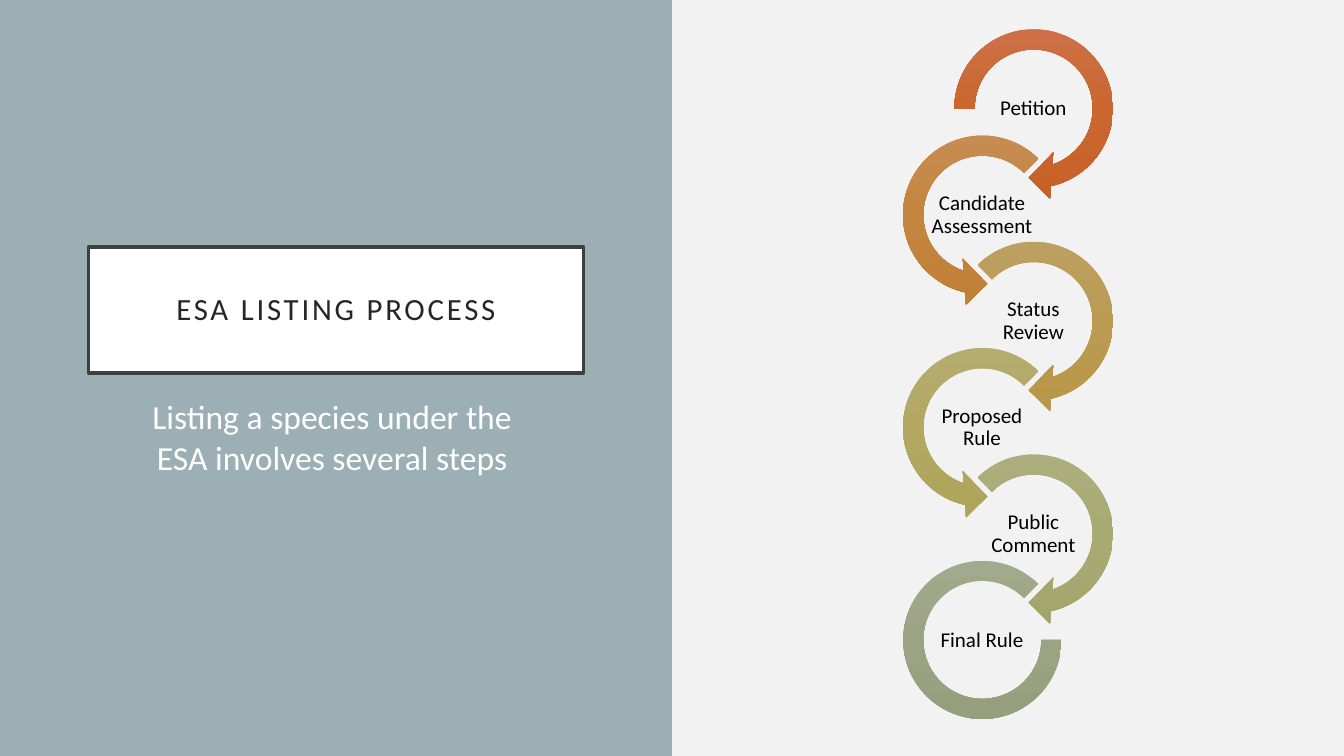
from copy import deepcopy

from pptx import Presentation
from pptx.dml.color import RGBColor
from pptx.enum.shapes import MSO_SHAPE
from pptx.enum.text import MSO_ANCHOR, PP_ALIGN
from pptx.oxml.ns import qn
from pptx.util import Pt

FONT = "Calibri"
BACKGROUND = RGBColor(0xF2, 0xF2, 0xF2)
PANEL = RGBColor(0x9B, 0xAF, 0xB5)
WHITE = RGBColor(0xFF, 0xFF, 0xFF)
BLACK = RGBColor(0x00, 0x00, 0x00)
TITLE_TEXT = RGBColor(0x26, 0x26, 0x26)
TITLE_BORDER = RGBColor(0x40, 0x40, 0x40)

STEPS = [
    ("Petition", [RGBColor(0xCC, 0x73, 0x4B), RGBColor(0xCB, 0x66, 0x2F), RGBColor(0xC8, 0x61, 0x28)]),
    ("Candidate Assessment", [RGBColor(0xC6, 0x8E, 0x55), RGBColor(0xC4, 0x85, 0x3F), RGBColor(0xC1, 0x80, 0x38)]),
    ("Status Review", [RGBColor(0xBD, 0xA1, 0x63), RGBColor(0xBB, 0x9B, 0x51), RGBColor(0xB8, 0x97, 0x49)]),
    ("Proposed Rule", [RGBColor(0xB6, 0xAD, 0x71), RGBColor(0xB2, 0xA8, 0x62), RGBColor(0xAE, 0xA4, 0x5B)]),
    ("Public Comment", [RGBColor(0xAD, 0xAF, 0x7F), RGBColor(0xA8, 0xAA, 0x73), RGBColor(0xA3, 0xA6, 0x6C)]),
    ("Final Rule", [RGBColor(0xA3, 0xA9, 0x8C), RGBColor(0x9C, 0xA3, 0x83), RGBColor(0x97, 0x9E, 0x7C)]),
]
RING_LEFTS = (672.5, 635.8)
RING_TOP = 11.7
RING_SIZE = 131.8
RING_PITCH = 75.9
ARC_INSET = 9.4


def add_plain_shape(slide, kind, left, top, width, height):
    """Add a preset shape with neither shadow nor outline."""
    shape = slide.shapes.add_shape(kind, Pt(left), Pt(top), Pt(width), Pt(height))
    shape.shadow.inherit = False
    shape.line.fill.background()
    return shape


def add_box(slide, left, top, width, height, color):
    """Add a rectangle with a solid fill."""
    box = add_plain_shape(slide, MSO_SHAPE.RECTANGLE, left, top, width, height)
    box.fill.solid()
    box.fill.fore_color.rgb = color
    return box


def write_text(shape, text, size, color, anchor, inset_x, inset_y, line_spacing=1.0):
    """Write one centred run into a shape and return the run."""
    frame = shape.text_frame
    frame.word_wrap = True
    frame.vertical_anchor = anchor
    frame.margin_left = frame.margin_right = Pt(inset_x)
    frame.margin_top = frame.margin_bottom = Pt(inset_y)
    paragraph = frame.paragraphs[0]
    paragraph.alignment = PP_ALIGN.CENTER
    paragraph.line_spacing = line_spacing
    run = paragraph.add_run()
    run.text = text
    run.font.name = FONT
    run.font.size = Pt(size)
    run.font.color.rgb = color
    return run


def fill_gradient(shape, colors):
    """Fill a shape with three evenly spaced colours from top to bottom."""
    shape.fill.gradient()
    shape.fill.gradient_angle = 270
    stop_list = shape.fill._xPr.find(qn("a:gradFill")).find(qn("a:gsLst"))
    stop_list.append(deepcopy(stop_list[-1]))
    for index, (stop, color) in enumerate(zip(shape.fill.gradient_stops, colors)):
        stop.position = index / 2
        stop.color.rgb = color


def add_ring(slide, index, left, top):
    """Add the ring of one step, which points to the next step if there is one."""
    inset = 0
    if index == len(STEPS) - 1:
        kind, adjustments = MSO_SHAPE.BLOCK_ARC, (0, 189, 0.127)
        inset = ARC_INSET
    elif index % 2:
        kind, adjustments = MSO_SHAPE.LEFT_CIRCULAR_ARROW, (0.11, 11.423, 63, 189, 0.125)
    else:
        start = 135 if index else 108
        kind, adjustments = MSO_SHAPE.CIRCULAR_ARROW, (0.11, 11.423, 45, start, 0.125)
    size = RING_SIZE - 2 * inset
    ring = add_plain_shape(slide, kind, left + inset, top + inset, size, size)
    for position, value in enumerate(adjustments):
        ring.adjustments[position] = value
    return ring


def add_step(slide, index, label, colors):
    """Add one step of the process: its ring and its label."""
    left = RING_LEFTS[index % 2]
    top = RING_TOP + index * RING_PITCH
    fill_gradient(add_ring(slide, index, left, top), colors)
    label_box = slide.shapes.add_textbox(Pt(left + 28.9), Pt(top + 47.8), Pt(73.4), Pt(36.7))
    write_text(label_box, label, 15, BLACK, MSO_ANCHOR.MIDDLE, 0.75, 0.75, 0.9)


def main():
    """Build the slide and save it."""
    presentation = Presentation()
    presentation.slide_width = Pt(960)
    presentation.slide_height = Pt(540)
    slide = presentation.slides.add_slide(presentation.slide_layouts[6])
    slide.background.fill.solid()
    slide.background.fill.fore_color.rgb = BACKGROUND

    add_box(slide, 0, 0, 480, 540, PANEL)
    title = add_box(slide, 63.3, 176.5, 353.6, 90, WHITE)
    title.line.color.rgb = TITLE_BORDER
    title.line.width = Pt(2.5)
    run = write_text(title, "ESA LISTING PROCESS", 22, TITLE_TEXT, MSO_ANCHOR.MIDDLE, 14.4, 14.4, 0.9)
    run.font._element.set("spc", "200")

    for index, (label, colors) in enumerate(STEPS):
        add_step(slide, index, label, colors)

    summary = slide.shapes.add_textbox(Pt(87.8), Pt(279.4), Pt(298.8), Pt(172.8))
    write_text(summary, "Listing a species under the ESA involves several steps", 24, WHITE,
               MSO_ANCHOR.TOP, 7.2, 3.6)
    presentation.save("out.pptx")


if __name__ == "__main__":
    main()
